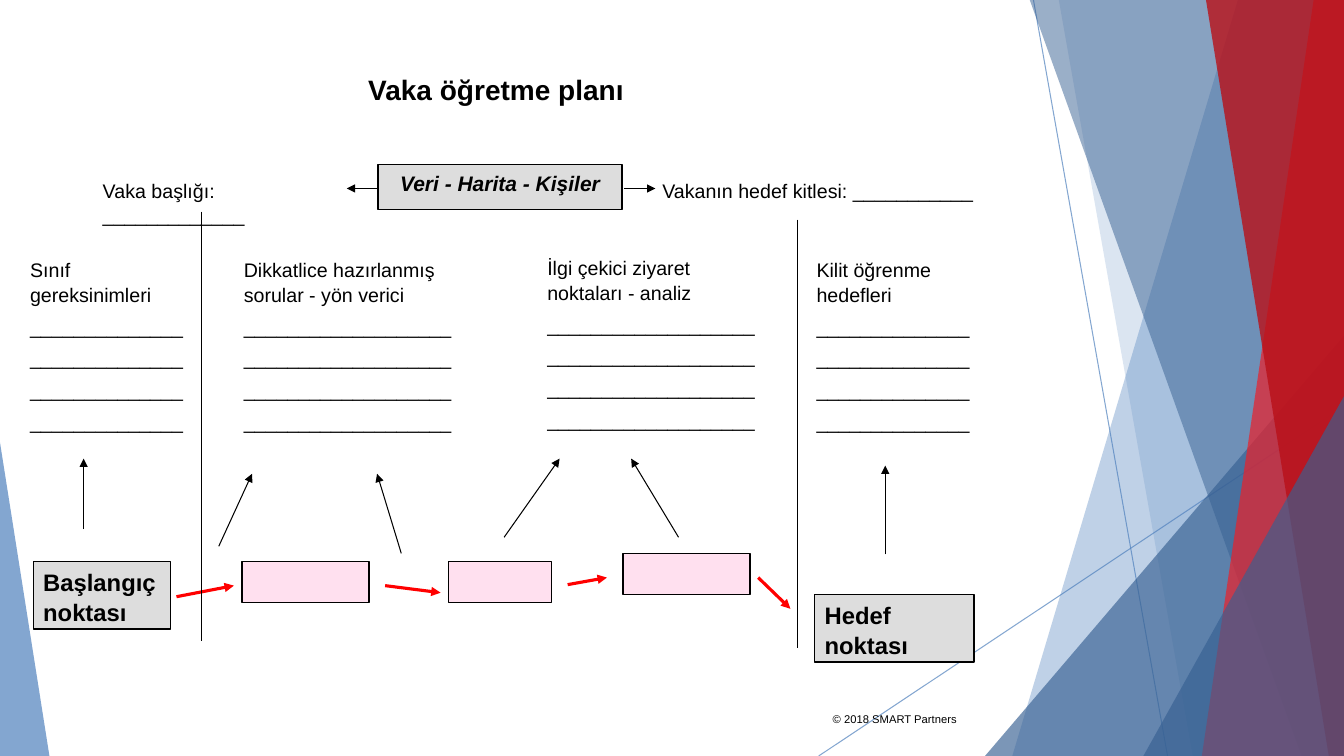
"""Build the case teaching plan slide."""
from typing import NamedTuple, Optional

from lxml import etree
from pptx import Presentation
from pptx.dml.color import RGBColor
from pptx.enum.dml import MSO_FILL
from pptx.enum.shapes import MSO_CONNECTOR, MSO_SHAPE
from pptx.enum.text import MSO_ANCHOR, MSO_AUTO_SIZE, PP_ALIGN
from pptx.oxml.ns import qn
from pptx.util import Emu, Pt

PX = 9144
FONT = "Arial"
STRAIGHT = MSO_CONNECTOR.STRAIGHT
RECTANGLE, TRIANGLE = MSO_SHAPE.RECTANGLE, MSO_SHAPE.ISOSCELES_TRIANGLE
LEFT, CENTER, RIGHT = PP_ALIGN.LEFT, PP_ALIGN.CENTER, PP_ALIGN.RIGHT
TOP, NO_FIT, SOLID = MSO_ANCHOR.TOP, MSO_AUTO_SIZE.NONE, MSO_FILL.SOLID
TEXT_SPACING, BLANK_SPACING = 1.05, 1.35
BLANK_ROWS = 4
COLORS = {
    "black": "000000", "white": "FFFFFF", "grey": "DDDDDD", "pink": "FF99CC",
    "arrow": "FF0000", "blue": "4F81BD", "navy": "376092",
    "red": "EC1F29", "crimson": "B91018",
}


class Frame(NamedTuple):
    """Left, top, width and height in px."""
    left: int
    top: int
    width: int
    height: int


class Stroke(NamedTuple):
    """A straight line, with or without an arrowhead at its end."""
    start: tuple[int, int]
    end: tuple[int, int]
    color: str = "black"
    weight: float = 0.75
    arrow: bool = True
    opacity: int = 100


class Panel(NamedTuple):
    """A translucent decorative polygon."""
    points: list[tuple[int, int]]
    color: str
    opacity: int


class Wedge(NamedTuple):
    """A translucent right-angled triangle."""
    frame: Frame
    apex: int
    color: str
    opacity: int


class Words(NamedTuple):
    """Paragraphs with their shared style."""
    lines: list[str]
    size: int = 14
    align: PP_ALIGN = LEFT
    bold: bool = False
    italic: bool = False


class Block(NamedTuple):
    """A bordered rectangle with optional words."""
    frame: Frame
    color: str
    opacity: int = 100
    words: Optional[Words] = None


class Label(NamedTuple):
    """Words placed without a border."""
    frame: Frame
    words: Words


class Column(NamedTuple):
    """A heading above blank rows to write on."""
    frame: Frame
    heading: list[str]
    blank_length: int


RAYS = [
    Stroke((1025, 0), (1158, 750), "blue", 0.75, False, 70),
    Stroke((1333, 403), (812, 750), "blue", 0.75, False, 70),
]
BACKDROP = [
    Panel([(1228, -1), (1333, -1), (1333, 750), (1004, 750)], "blue", 36),
    Panel([(1050, -1), (1333, -1), (1333, 750), (1183, 750)], "blue", 20),
    Wedge(Frame(977, 333, 356, 417), 1, "navy", 66),
    Panel([(1021, -1), (1333, -1), (1333, 750), (1291, 750)], "navy", 50),
    Panel([(1303, -1), (1333, -1), (1333, 750), (1192, 750)], "red", 70),
    Panel([(1196, -1), (1333, -1), (1333, 750), (1318, 750)], "crimson", 80),
    Wedge(Frame(1134, 393, 199, 357), 1, "navy", 66),
    Wedge(Frame(0, 439, 49, 311), 0, "blue", 70),
]
BLOCKS = [
    Block(Frame(375, 163, 242, 45), "grey",
          words=Words(["Veri - Harita - Kişiler"], 15, CENTER, True, True)),
    Block(Frame(33, 557, 136, 67), "grey",
          words=Words(["Başlangıç noktası"], 17, bold=True)),
    Block(Frame(808, 590, 158, 67), "grey",
          words=Words(["Hedef", "noktası"], 17, bold=True)),
    Block(Frame(240, 557, 126, 41), "pink", 30),
    Block(Frame(445, 557, 102, 41), "pink", 30),
    Block(Frame(618, 549, 126, 41), "pink", 30),
]
ROUTE = [
    ((175, 592), (232, 581)), ((382, 581), (437, 588)),
    ((563, 580), (602, 573)), ((752, 573), (784, 604)),
]
POINTERS = [
    ((619, 187), (650, 187)), ((375, 187), (344, 187)),
    ((500, 533), (555, 455)), ((673, 533), (626, 455)),
    ((217, 542), (250, 470)), ((398, 549), (374, 470)),
    ((83, 525), (83, 455)), ((878, 550), (878, 462)),
]
DIVIDERS = [((791, 218), (791, 643)), ((200, 210), (200, 636))]
STROKES = [
    *(Stroke(*ends, "arrow", 2.25) for ends in ROUTE),
    *(Stroke(*ends) for ends in POINTERS),
    *(Stroke(*ends, arrow=False) for ends in DIVIDERS),
]
TITLE = Label(Frame(300, 65, 384, 43),
              Words(["Vaka öğretme planı"], 20, CENTER, True))
LABELS = [
    Label(Frame(647, 171, 341, 34), Words(["Vakanın hedef kitlesi: ___________"])),
    Label(Frame(92, 171, 258, 57), Words(["Vaka başlığı: _____________"])),
    Label(Frame(801, 701, 158, 23), Words(["© 2018 SMART Partners"], 8, RIGHT)),
]
COLUMNS = [
    Column(Frame(20, 250, 181, 178), ["Sınıf", "gereksinimleri"], 14),
    Column(Frame(232, 250, 260, 178),
           ["Dikkatlice hazırlanmış sorular - yön verici"], 19),
    Column(Frame(533, 248, 242, 178), ["İlgi çekici ziyaret", "noktaları - analiz"], 19),
    Column(Frame(800, 250, 185, 178), ["Kilit öğrenme", "hedefleri"], 14),
]


def rgb(name: str) -> RGBColor:
    """Return the named colour."""
    return RGBColor.from_string(COLORS[name])


def emu(lengths) -> list[Emu]:
    """Turn px lengths into EMU."""
    return [Emu(length * PX) for length in lengths]


def set_opacity(shape, percent: int) -> None:
    """Make the first colour of a shape translucent."""
    if percent < 100:
        color = next(shape.element.spPr.iter(qn("a:srgbClr")))
        etree.SubElement(color, qn("a:alpha"), val=str(percent * 1000))


def paint(shape, color: str, opacity: int) -> None:
    """Give a shape a plain fill without line or shadow."""
    shape.shadow.inherit = False
    shape.fill.solid()
    shape.fill.fore_color.rgb = rgb(color)
    shape.line.fill.background()
    set_opacity(shape, opacity)


def write(shape, words: Words) -> None:
    """Put styled words into a shape from its top."""
    frame = shape.text_frame
    frame.text = "\n".join(words.lines)
    frame.word_wrap, frame.auto_size, frame.vertical_anchor = True, NO_FIT, TOP
    for para in frame.paragraphs:
        blank = not para.text.strip("_")
        para.alignment = words.align
        para.line_spacing = BLANK_SPACING if blank else TEXT_SPACING
        para.space_before = Pt(0)
        for span in para.runs:
            span.font.name, span.font.size = FONT, Pt(words.size)
            span.font.bold, span.font.italic = words.bold, words.italic
            span.font.color.rgb = rgb("black")


def draw_stroke(page, stroke: Stroke) -> None:
    """Draw a line or an arrow."""
    line = page.shapes.add_connector(STRAIGHT, *emu(stroke.start + stroke.end))
    line.line.color.rgb = rgb(stroke.color)
    line.line.width = Pt(stroke.weight)
    set_opacity(line, stroke.opacity)
    properties = line.element.spPr
    if stroke.arrow:
        etree.SubElement(properties.find(qn("a:ln")), qn("a:tailEnd"), type="triangle")
    etree.SubElement(properties, qn("a:effectLst"))


def draw_panel(page, panel: Panel) -> None:
    """Draw a decorative polygon."""
    builder = page.shapes.build_freeform(*panel.points[0], scale=PX)
    builder.add_line_segments(panel.points[1:], close=True)
    paint(builder.convert_to_shape(), panel.color, panel.opacity)


def draw_wedge(page, wedge: Wedge) -> None:
    """Draw a decorative triangle."""
    shape = page.shapes.add_shape(TRIANGLE, *emu(wedge.frame))
    shape.adjustments[0] = wedge.apex
    paint(shape, wedge.color, wedge.opacity)


def draw_block(page, block: Block) -> None:
    """Draw a bordered rectangle."""
    box = page.shapes.add_shape(RECTANGLE, *emu(block.frame))
    paint(box, block.color, block.opacity)
    box.line.color.rgb = rgb("black")
    box.line.width = Pt(1)
    if block.words:
        write(box, block.words)


def draw_label(page, label: Label) -> None:
    """Draw a text box."""
    write(page.shapes.add_textbox(*emu(label.frame)), label.words)


def draw_column(page, column: Column) -> None:
    """Draw a heading with its blank rows."""
    blanks = ["_" * column.blank_length] * BLANK_ROWS
    draw_label(page, Label(column.frame, Words(column.heading + blanks)))


def place_title(page, label: Label) -> None:
    """Move and format the title placeholder."""
    title = page.shapes.title
    title.left, title.top, title.width, title.height = emu(label.frame)
    write(title, label.words)


def main() -> None:
    """Build and save the deck."""
    deck = Presentation()
    deck.slide_width, deck.slide_height = emu((1333, 750))
    page = deck.slides.add_slide(deck.slide_layouts[5])
    page.background.fill.solid()
    page.background.fill.fore_color.rgb = rgb("white")
    place_title(page, TITLE)
    for ray in RAYS:
        draw_stroke(page, ray)
    for part in BACKDROP:
        draw = draw_panel if isinstance(part, Panel) else draw_wedge
        draw(page, part)
    for draw, items in ((draw_block, BLOCKS), (draw_stroke, STROKES),
                        (draw_label, LABELS), (draw_column, COLUMNS)):
        for item in items:
            draw(page, item)
    deck.save("out.pptx")


if __name__ == "__main__":
    main()
